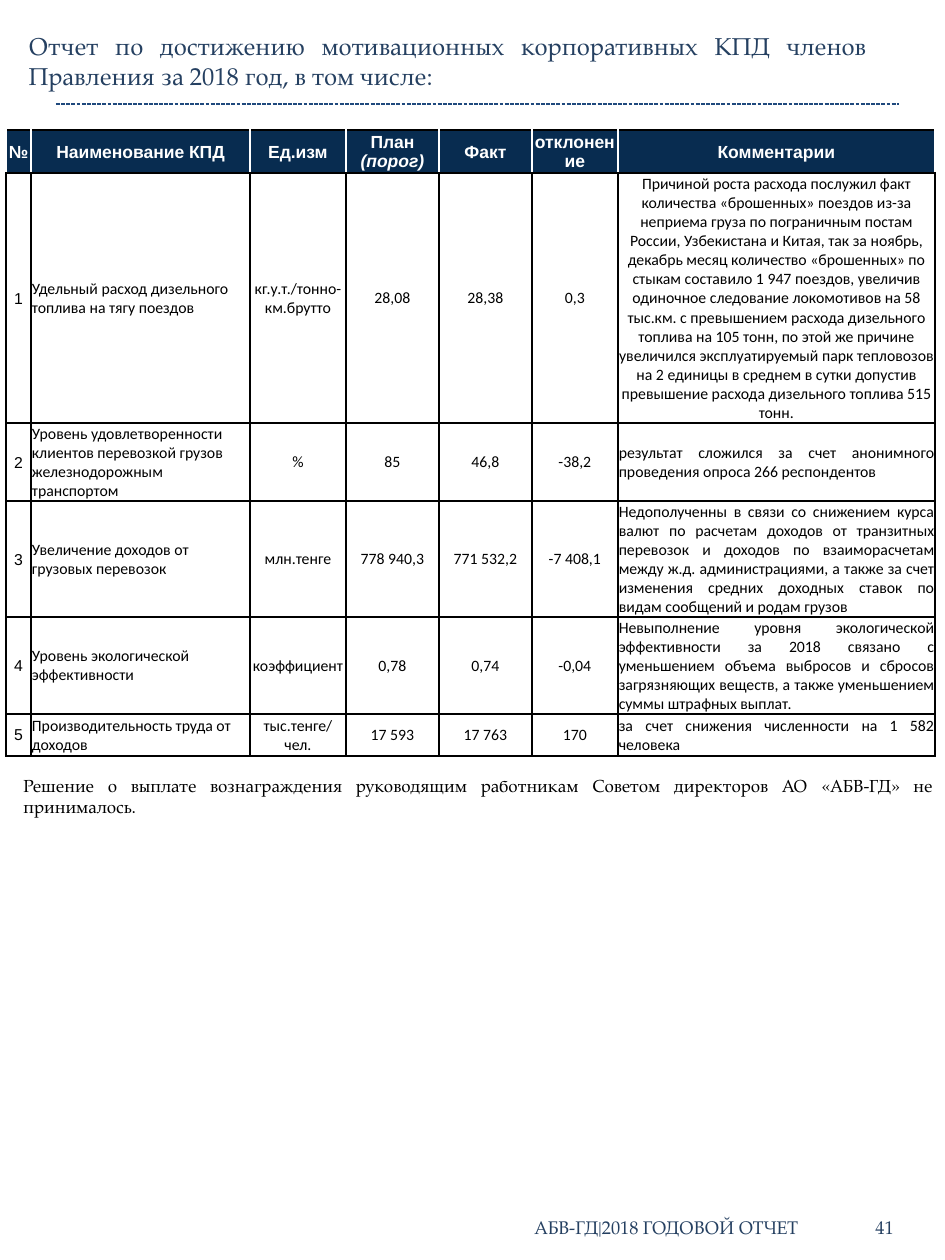
from dataclasses import dataclass

from lxml.etree import SubElement
from pptx import Presentation
from pptx.dml.color import RGBColor
from pptx.enum.dml import MSO_LINE
from pptx.enum.shapes import MSO_CONNECTOR
from pptx.enum.text import MSO_ANCHOR, MSO_AUTO_SIZE, PP_ALIGN
from pptx.oxml.ns import qn
from pptx.util import Emu, Pt

EMU_PER_PX = 914400 / 126


@dataclass(frozen=True)
class Theme:
    navy: str = "082C50"
    title_blue: str = "254061"
    rule_blue: str = "1F497D"
    black: str = "000000"
    white: str = "FFFFFF"
    serif: str = "TeX Gyre Pagella"
    sans: str = "Arial"
    body: str = "Calibri"
    title_size: float = 14
    note_size: float = 10
    footer_size: float = 10.5
    header_size: float = 10
    cell_size: float = 9


THEME = Theme()

COLUMN_WIDTHS = [25, 219, 96, 93, 93, 86, 317]
ROW_HEIGHTS = [40, 250, 78, 116, 97, 42]
HEADERS = ["№", "Наименование КПД", "Ед.изм", "План ", "Факт", "отклонение", "Комментарии"]
PLAN_COLUMN = HEADERS.index("План ")
ROWS = [
    ["Удельный расход дизельного топлива на тягу поездов",
     "кг.у.т./тонно-км.брутто", "28,08", "28,38", "0,3",
     "Причиной роста расхода послужил факт количества «брошенных» поездов из-за "
     "неприема груза по пограничным постам России, Узбекистана и Китая, так за ноябрь, "
     "декабрь месяц количество «брошенных» по стыкам составило 1 947 поездов, увеличив "
     "одиночное следование локомотивов на 58 тыс.км. с превышением расхода дизельного "
     "топлива на 105 тонн, по этой же причине увеличился эксплуатируемый парк тепловозов "
     "на 2 единицы в среднем в сутки допустив превышение расхода дизельного топлива 515 тонн."],
    ["Уровень удовлетворенности клиентов перевозкой грузов железнодорожным транспортом",
     "%", "85", "46,8", "-38,2",
     "результат сложился за счет анонимного проведения опроса 266 респондентов"],
    ["Увеличение доходов от грузовых перевозок",
     "млн.тенге", "778 940,3", "771 532,2", "-7 408,1",
     "Недополученны в связи со снижением курса валют по расчетам доходов от транзитных "
     "перевозок и доходов по взаиморасчетам между ж.д. администрациями, а также за счет "
     "изменения средних доходных ставок по видам сообщений и родам грузов"],
    ["Уровень экологической эффективности",
     "коэффициент", "0,78", "0,74", "-0,04",
     "Невыполнение уровня экологической эффективности за 2018 связано с уменьшением объема "
     "выбросов и сбросов загрязняющих веществ, а также уменьшением суммы штрафных выплат."],
    ["Производительность труда от доходов",
     "тыс.тенге/\nчел.", "17 593", "17 763", "170",
     "за счет снижения численности на 1 582 человека"],
]


def px(value):
    return Emu(round(value * EMU_PER_PX))


def set_attributes(target, values):
    for name, value in values.items():
        setattr(target, name, value)


def format_run(run, name, size, color, bold=False, italic=False):
    set_attributes(run.font, {"name": name, "size": Pt(size), "bold": bold, "italic": italic})
    run.font.color.rgb = RGBColor.from_string(color)


def fill_text(text_frame, text, alignment, **font):
    text_frame.text = text
    for paragraph in text_frame.paragraphs:
        paragraph.alignment = alignment
        for run in paragraph.runs:
            format_run(run, **font)


def place_text(shape, box, text, alignment, **font):
    set_attributes(shape, dict(zip(("left", "top", "width", "height"), map(px, box))))
    set_attributes(shape.text_frame, {
        "word_wrap": True,
        "auto_size": MSO_AUTO_SIZE.SHAPE_TO_FIT_TEXT,
        "vertical_anchor": MSO_ANCHOR.TOP,
    })
    fill_text(shape.text_frame, text, alignment, **font)


def add_text(slide, box, text, alignment, **font):
    shape = slide.shapes.add_textbox(*map(px, box))
    place_text(shape, box, text, alignment, **font)
    return shape


def add_tab_stop(paragraph, position):
    tabs = SubElement(paragraph._p.get_or_add_pPr(), qn("a:tabLst"))
    SubElement(tabs, qn("a:tab"), pos=str(px(position)), algn="l")


def add_dashed_rule(slide, left, right, y):
    rule = slide.shapes.add_connector(MSO_CONNECTOR.STRAIGHT, px(left), px(y), px(right), px(y))
    rule.line.color.rgb = RGBColor.from_string(THEME.rule_blue)
    set_attributes(rule.line, {"width": Pt(0.75), "dash_style": MSO_LINE.SQUARE_DOT})
    SubElement(rule._element.spPr, qn("a:effectLst"))


def set_borders(cell, borders):
    properties = cell._tc.get_or_add_tcPr()
    for side, (color, width) in borders.items():
        line = SubElement(properties, qn(f"a:ln{side}"), w=str(Pt(width)))
        fill = SubElement(line, qn("a:solidFill"))
        SubElement(fill, qn("a:srgbClr"), val=color)


def format_cell(cell, text, alignment, fill, borders, **font):
    set_attributes(cell, {
        "margin_left": px(1), "margin_right": px(1), "margin_top": px(1), "margin_bottom": 0,
        "vertical_anchor": MSO_ANCHOR.MIDDLE,
    })
    set_borders(cell, borders)
    cell.fill.solid()
    cell.fill.fore_color.rgb = RGBColor.from_string(fill)
    fill_text(cell.text_frame, text, alignment, **font)


def add_header_row(table):
    white, black = (THEME.white, 1.5), (THEME.black, 1)
    borders = {"L": white, "R": white, "T": black, "B": black}
    font = {"name": THEME.sans, "size": THEME.header_size, "color": THEME.white, "bold": True}
    for column, text in enumerate(HEADERS):
        format_cell(table.cell(0, column), text, PP_ALIGN.CENTER, THEME.navy, borders, **font)
    threshold = table.cell(0, PLAN_COLUMN).text_frame.paragraphs[0].add_run()
    threshold.text = "(порог)"
    format_run(threshold, italic=True, **font)


def add_indicator_row(table, number, values):
    borders = {side: (THEME.black, 1) for side in "LRTB"}
    comment = PP_ALIGN.CENTER if number == 1 else PP_ALIGN.JUSTIFY
    alignments = [PP_ALIGN.CENTER, PP_ALIGN.LEFT] + [PP_ALIGN.CENTER] * 4 + [comment]
    for column, (text, alignment) in enumerate(zip([str(number), *values], alignments)):
        format_cell(table.cell(number, column), text, alignment, THEME.white, borders,
                    name=THEME.body if column else THEME.sans,
                    size=THEME.cell_size, color=THEME.black)


def add_indicator_table(slide, left, top):
    box = (left, top, sum(COLUMN_WIDTHS), sum(ROW_HEIGHTS))
    table = slide.shapes.add_table(len(ROW_HEIGHTS), len(COLUMN_WIDTHS), *map(px, box)).table
    set_attributes(table, {"first_row": False, "horz_banding": False})
    for column, width in zip(table.columns, COLUMN_WIDTHS):
        column.width = px(width)
    for row, height in zip(table.rows, ROW_HEIGHTS):
        row.height = px(height)
    add_header_row(table)
    for number, values in enumerate(ROWS, start=1):
        add_indicator_row(table, number, values)


def main():
    presentation = Presentation()
    set_attributes(presentation, {"slide_width": px(945), "slide_height": px(1260)})
    slide = presentation.slides.add_slide(presentation.slide_layouts[5])
    place_text(slide.shapes.title, (16, 25, 863, 72),
               "Отчет по достижению мотивационных корпоративных КПД членов "
               "Правления за 2018 год, в том числе:", PP_ALIGN.JUSTIFY,
               name=THEME.serif, size=THEME.title_size, color=THEME.title_blue)
    add_indicator_table(slide, 6, 130)
    add_dashed_rule(slide, 56, 899, 104)
    add_text(slide, (11, 769, 934, 55),
             "Решение о выплате вознаграждения руководящим работникам Советом директоров "
             "АО «АБВ-ГД» не принималось.", PP_ALIGN.JUSTIFY,
             name=THEME.serif, size=THEME.note_size, color=THEME.black)
    footer = add_text(slide, (522, 1210, 407, 35), "АБВ-ГД|2018 ГОДОВОЙ ОТЧЕТ\t41", PP_ALIGN.LEFT,
                      name=THEME.serif, size=THEME.footer_size, color=THEME.title_blue)
    add_tab_stop(footer.text_frame.paragraphs[0], 341)
    presentation.save("out.pptx")


if __name__ == "__main__":
    main()
